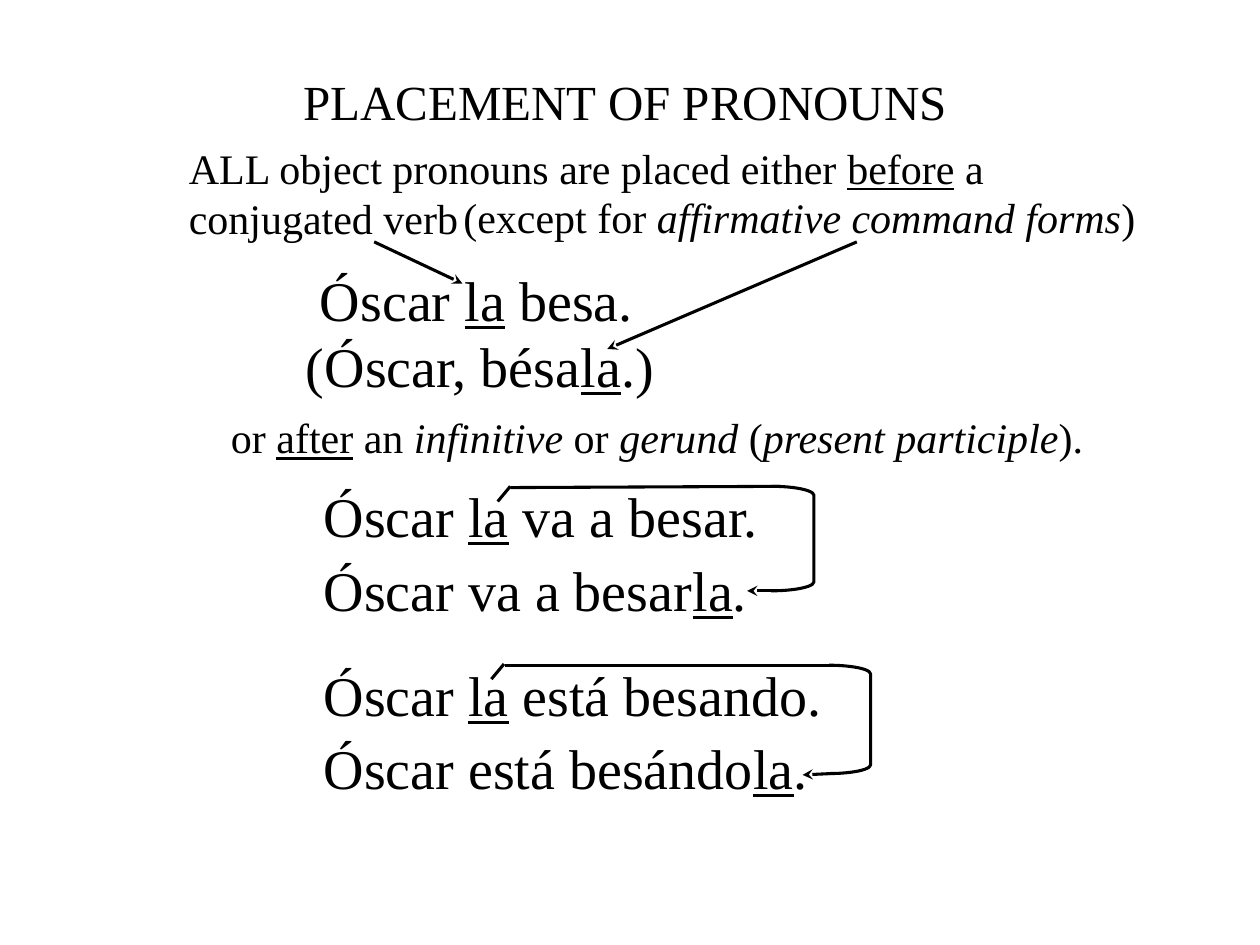
from pptx import Presentation
from pptx.dml.color import RGBColor
from pptx.enum.shapes import MSO_CONNECTOR as Conn, MSO_SHAPE as Shape
from pptx.enum.text import MSO_ANCHOR as Anchor, MSO_AUTO_SIZE as Fit, PP_ALIGN as Align
from pptx.oxml.ns import qn
from pptx.util import Inches, Pt
from lxml.etree import SubElement

BLACK = RGBColor(0, 0, 0)
FONT = "Times New Roman"
LEFT = 2.47


def fill_text(shape, parts, size, align=Align.LEFT, space=1.0):
    frame = shape.text_frame
    frame.word_wrap = True
    frame.auto_size = Fit.NONE
    frame.vertical_anchor = Anchor.TOP
    para = frame.paragraphs[0]
    para.alignment = align
    para.line_spacing = space
    for words, style in parts:
        run = para.add_run()
        run.text = words
        font = run.font
        font.name = FONT
        font.size = Pt(size)
        font.color.rgb = BLACK
        font.underline = style == "u"
        font.italic = style == "i"


def add_text(slide, box, parts, size=24, align=Align.LEFT, space=1.0):
    shape = slide.shapes.add_textbox(*map(Inches, box))
    fill_text(shape, parts, size, align, space)


def add_title(slide, box, words):
    title = slide.shapes.title
    title.left, title.top, title.width, title.height = map(Inches, box)
    fill_text(title, [(words, "")], 28, Align.CENTER)


def set_line(line):
    line.color.rgb = BLACK
    line.width = Pt(1.75)


def add_line(shapes, start, end, arrow=False):
    line = shapes.add_connector(Conn.STRAIGHT, *map(Inches, start + end))
    set_line(line.line)
    props = line.element.spPr
    if arrow:
        SubElement(props.find(qn("a:ln")), qn("a:tailEnd"), type="stealth")
    SubElement(props, qn("a:effectLst"))


def add_loop(slide, box, bend, top, tick, arrow):
    shapes = slide.shapes.add_group_shape().shapes
    add_line(shapes, *top)
    curve = shapes.add_shape(Shape.RIGHT_BRACKET, *map(Inches, box))
    curve.adjustments[0] = bend
    curve.shadow.inherit = False
    curve.fill.background()
    set_line(curve.line)
    add_line(shapes, *tick)
    add_line(shapes, *arrow, arrow=True)


def main():
    deck = Presentation()
    deck.slide_width, deck.slide_height = Inches(10), Inches(7.5)
    slide = deck.slides.add_slide(deck.slide_layouts[5])

    add_title(slide, (0.5, 0.52, 8.92, 0.57), "PLACEMENT OF PRONOUNS")
    add_text(slide, (1.4, 1.08, 7.08, 0.9), [
        ("ALL object pronouns are placed either ", ""), ("before", "u"),
        (" a conjugated verb", "")])
    add_text(slide, (3.58, 1.47, 5.67, 0.5), [
        ("(except for ", ""), ("affirmative command forms", "i"), (")", "")])
    add_text(slide, (1.3, 3.22, 7.83, 0.67), [
        ("or ", ""), ("after", "u"), (" an ", ""), ("infinitive", "i"),
        (" or ", ""), ("gerund", "i"), (" (", ""),
        ("present participle", "i"), (").", "")], align=Align.CENTER)

    samples = [
        (2.33, 2.06, 3.67, 1.0, " Óscar ", " besa."),
        (2.33, 2.64, 3.67, 0.9, "(Óscar, bésa", ".)"),
        (LEFT, 3.83, 4.08, 0.9, "Óscar ", " va a besar."),
        (LEFT, 4.42, 4, 0.9, "Óscar va a besar", "."),
        (LEFT, 5.25, 5.17, 0.9, "Óscar ", " está besando."),
        (LEFT, 5.83, 4.42, 0.9, "Óscar está besándo", "."),
    ]
    for left, top, width, space, before, after in samples:
        parts = [(before, ""), ("la", "u"), (after, "")]
        add_text(slide, (left, top, width, 0.67), parts, 32, space=space)

    add_line(slide.shapes, (2.97, 1.92), (3.67, 2.25), arrow=True)
    add_line(slide.shapes, (6.8, 1.92), (4.82, 2.77), arrow=True)
    add_loop(slide, (6.12, 3.86, 0.34, 0.83), 0.21,
             top=((4.05, 3.87), (6.19, 3.86)),
             tick=((4.05, 3.86), (3.95, 3.98)),
             arrow=((6.19, 4.69), (5.93, 4.69)))
    add_loop(slide, (6.58, 5.28, 0.33, 0.86), 0.21,
             top=((4.01, 5.28), (6.58, 5.28)),
             tick=((4, 5.27), (3.9, 5.39)),
             arrow=((6.59, 6.14), (6.37, 6.15)))

    deck.save("out.pptx")


if __name__ == "__main__":
    main()
